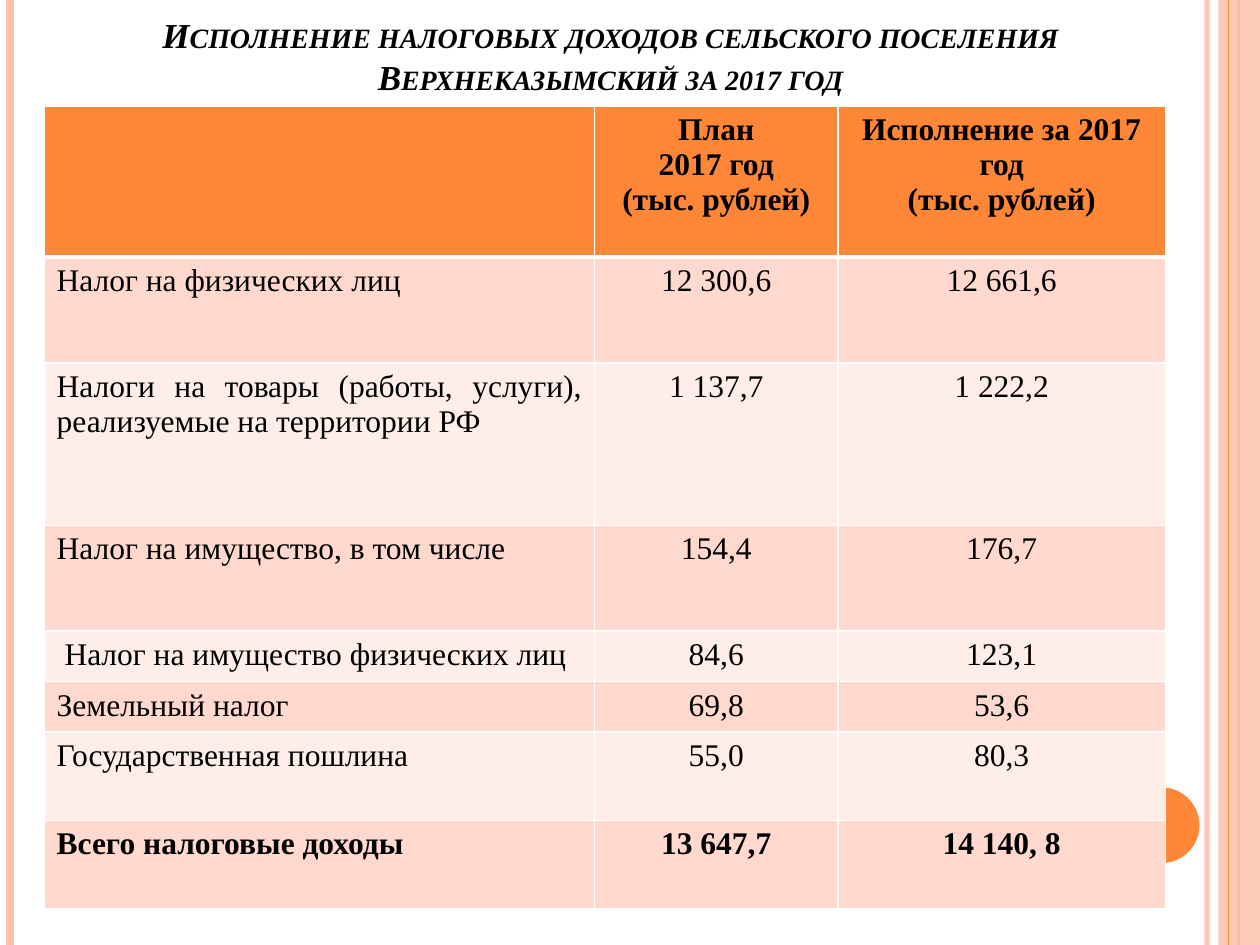
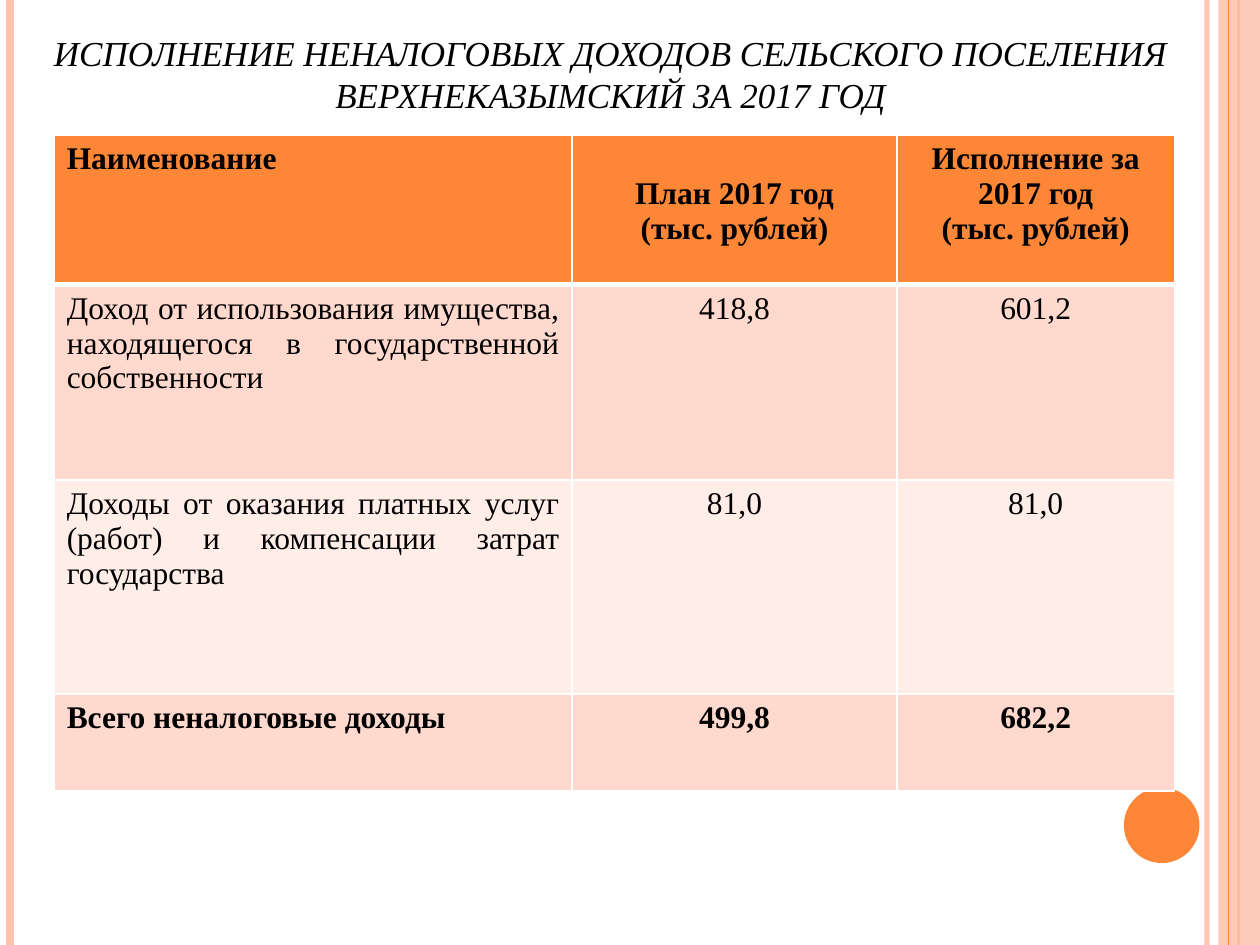
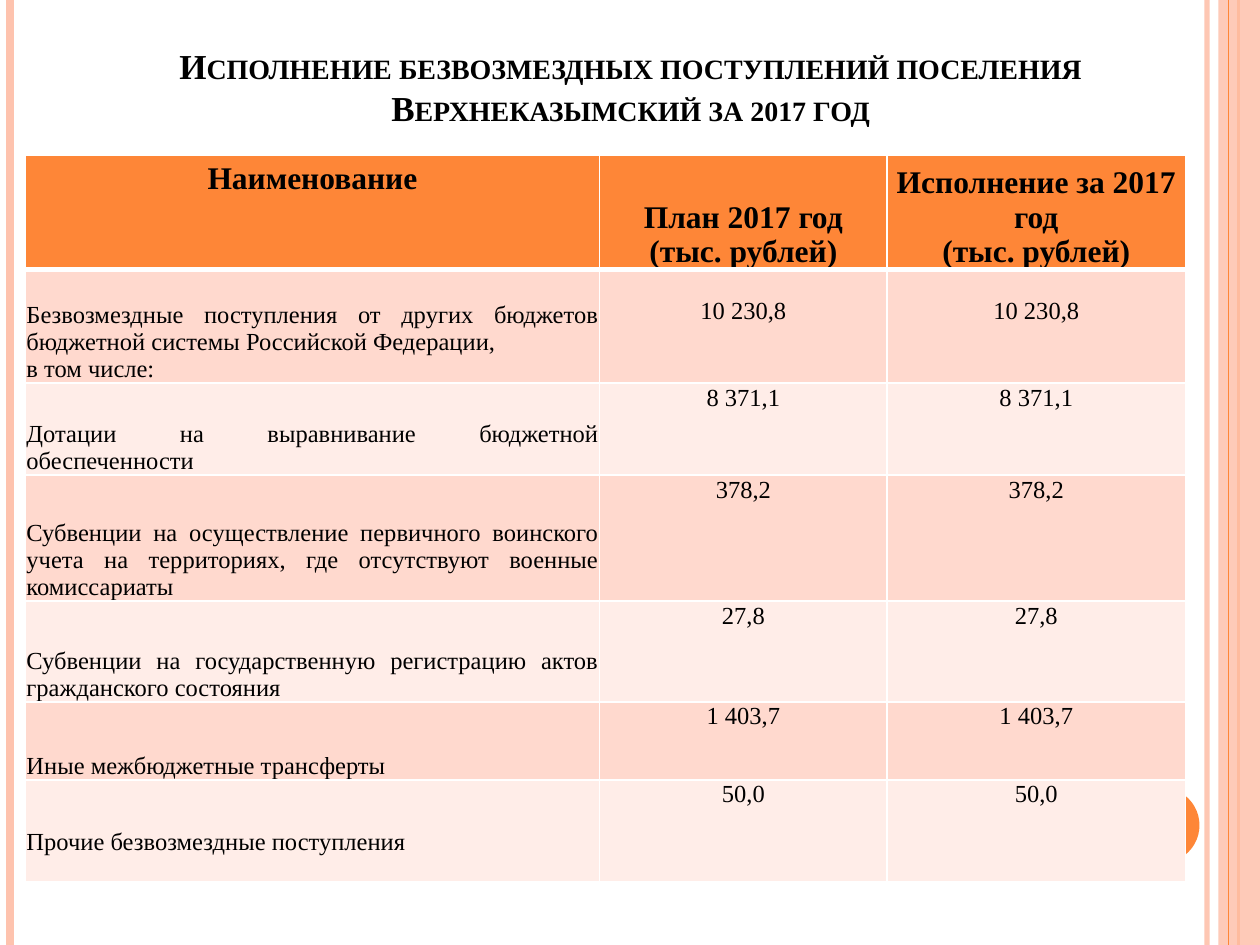
from dataclasses import dataclass, field

from lxml import etree
from pptx import Presentation
from pptx.dml.color import RGBColor
from pptx.enum.shapes import MSO_CONNECTOR, MSO_SHAPE
from pptx.enum.text import MSO_ANCHOR, PP_ALIGN
from pptx.oxml.ns import qn
from pptx.util import Inches, Pt

ORANGE = RGBColor(0xFE, 0x86, 0x37)
PEACH = RGBColor(0xFE, 0xC3, 0xAE)
DARK_ROW = RGBColor(0xFF, 0xD9, 0xCE)
LIGHT_ROW = RGBColor(0xFF, 0xED, 0xE8)
WHITE = RGBColor(0xFF, 0xFF, 0xFF)
BLACK = RGBColor(0, 0, 0)
FONT = "Times New Roman"
SLIDE_W, SLIDE_H = 10, 7.5
HEADER_SIZE, TITLE_SIZE = 18, 20


@dataclass(frozen=True)
class Stripe:
    x: float
    color: RGBColor
    width: float
    opacity: int = 100


@dataclass(frozen=True)
class Title:
    text: str
    left: float
    top: float
    width: float
    height: float
    bold: bool = True
    italic: bool = False
    small_caps: bool = True
    side_inset: float = 0.1
    bottom_inset: float = 0.05


@dataclass(frozen=True)
class Budget:
    """A table of income lines with planned and actual sums."""
    left: float
    top: float
    columns: list[float]
    heights: list[float]
    rows: list[tuple[str, str, str]]
    body_size: int = 18
    total_row: bool = True
    tight: bool = False
    corner_align: PP_ALIGN = PP_ALIGN.CENTER
    top_insets: dict[tuple[int, int], float] = field(default_factory=dict)
    bottom_insets: dict[tuple[int, int], float] = field(default_factory=dict)


STRIPES_BELOW = [Stripe(9.58, PEACH, 3, 93), Stripe(0.08, PEACH, 4.5),
                 Stripe(9.83, ORANGE, 1.5)]
STRIPE_ABOVE = Stripe(9.75, ORANGE, 0.75)

PAGES = [
    (
        Title("Исполнение налоговых доходов сельского поселения "
              "Верхнеказымский за 2017 год", 0.35, 0.12, 8.99, 0.7, italic=True),
        Budget(0.35, 0.84, [4.37, 1.93, 2.6],
               [1.2, 0.84, 1.29, 0.84, 0.39, 0.4, 0.7, 0.7], [
            ("", "План\n2017 год\n(тыс. рублей)",
             "Исполнение за 2017 год\n(тыс. рублей)"),
            ("Налог на физических лиц", "12 300,6", "12 661,6"),
            ("Налоги на товары (работы, услуги), реализуемые на территории РФ",
             "1 137,7", "1 222,2"),
            ("Налог на имущество, в том числе", "154,4", "176,7"),
            (" Налог на имущество физических лиц", "84,6", "123,1"),
            ("Земельный налог", "69,8", "53,6"),
            ("Государственная пошлина", "55,0", "80,3"),
            ("Всего налоговые доходы", "13 647,7", "14 140, 8"),
        ]),
    ),
    (
        Title("ИСПОЛНЕНИЕ НЕНАЛОГОВЫХ ДОХОДОВ СЕЛЬСКОГО ПОСЕЛЕНИЯ "
              "ВЕРХНЕКАЗЫМСКИЙ ЗА 2017 ГОД", 0.35, 0.21, 8.99, 0.71,
              bold=False, italic=True, small_caps=False,
              side_inset=0.05, bottom_inset=0),
        Budget(0.43, 1.07, [4.11, 2.58, 2.2], [1.19, 1.55, 1.7, 0.77], [
            ("Наименование", "План 2017 год\n(тыс. рублей)",
             "Исполнение за 2017 год\n(тыс. рублей)"),
            ("Доход от использования имущества, находящегося "
             "в государственной собственности", "418,8", "601,2"),
            ("Доходы от оказания платных услуг (работ) "
             "и компенсации затрат государства", "81,0", "81,0"),
            ("Всего неналоговые доходы", "499,8", "682,2"),
        ], corner_align=PP_ALIGN.LEFT, top_insets={(0, 1): 0.33}),
    ),
    (
        Title("Исполнение безвозмездных поступлений поселения "
              "Верхнеказымский за 2017 год", 0.28, 0.37, 9.45, 0.7),
        Budget(0.2, 1.23, [4.56, 2.28, 2.37],
               [0.87, 0.9, 0.73, 1, 0.8, 0.62, 0.81], [
            ("Наименование", "План 2017 год\n(тыс. рублей)",
             "Исполнение за 2017 год\n(тыс. рублей)"),
            ("Безвозмездные поступления от других бюджетов бюджетной системы "
             "Российской Федерации,\nв том числе:", "10 230,8", "10 230,8"),
            ("Дотации на выравнивание бюджетной обеспеченности",
             "8 371,1", "8 371,1"),
            ("Субвенции на осуществление первичного воинского учета на "
             "территориях, где отсутствуют военные комиссариаты",
             "378,2", "378,2"),
            ("Субвенции на государственную регистрацию актов гражданского "
             "состояния", "27,8", "27,8"),
            ("Иные межбюджетные трансферты", "1 403,7", "1 403,7"),
            ("Прочие безвозмездные поступления", "50,0", "50,0"),
        ], body_size=14, total_row=False, tight=True,
            top_insets={(1, 1): 0.22, (1, 2): 0.22},
            bottom_insets={(6, 0): 0.21}),
    ),
]


def set_opacity(element: etree.ElementBase, percent: int) -> None:
    for color in element.iter(qn("a:srgbClr")):
        etree.SubElement(color, qn("a:alpha"), val=str(percent * 1000))


def style_text(frame, size: int, align: PP_ALIGN, bold: bool,
               italic: bool = False, small_caps: bool = False) -> None:
    for paragraph in frame.paragraphs:
        paragraph.alignment = align
        for run in paragraph.runs:
            font = run.font
            font.name, font.size = FONT, Pt(size)
            font.bold, font.italic = bold, italic
            font.color.rgb = BLACK
            if small_caps:
                run._r.get_or_add_rPr().set("cap", "small")


def draw_stripe(slide, stripe: Stripe) -> None:
    x = Inches(stripe.x)
    line = slide.shapes.add_connector(MSO_CONNECTOR.STRAIGHT, x, 0, x, Inches(SLIDE_H))
    line.line.color.rgb = stripe.color
    line.line.width = Pt(stripe.width)
    properties = line._element.spPr
    if stripe.opacity < 100:
        set_opacity(properties, stripe.opacity)
    etree.SubElement(properties, qn("a:effectLst"))


def draw_solid(slide, kind: MSO_SHAPE, left: float, top: float, width: float,
               height: float, color: RGBColor, opacity: int = 100) -> None:
    solid = slide.shapes.add_shape(kind, Inches(left), Inches(top),
                                   Inches(width), Inches(height))
    solid.shadow.inherit = False
    solid.fill.solid()
    solid.fill.fore_color.rgb = color
    solid.line.fill.background()
    if opacity < 100:
        set_opacity(solid._element.spPr, opacity)


def draw_frame(slide) -> None:
    for stripe in STRIPES_BELOW:
        draw_stripe(slide, stripe)
    draw_solid(slide, MSO_SHAPE.RECTANGLE, 9.67, 0, 0.33, SLIDE_H, PEACH, 87)
    draw_stripe(slide, STRIPE_ABOVE)
    draw_solid(slide, MSO_SHAPE.OVAL, 8.92, 6.25, 0.6, 0.6, ORANGE)


def draw_title(slide, title: Title) -> None:
    box = slide.shapes.add_textbox(Inches(title.left), Inches(title.top),
                                   Inches(title.width), Inches(title.height))
    frame = box.text_frame
    frame.word_wrap = True
    frame.vertical_anchor = MSO_ANCHOR.BOTTOM
    frame.margin_left = frame.margin_right = Inches(title.side_inset)
    frame.margin_top, frame.margin_bottom = 0, Inches(title.bottom_inset)
    frame.text = title.text
    style_text(frame, TITLE_SIZE, PP_ALIGN.CENTER, title.bold, title.italic,
               title.small_caps)


def set_borders(cell, row: int) -> None:
    widths = {"L": 1, "R": 1, "T": 3 if row == 1 else 1, "B": 3 if row == 0 else 1}
    properties = cell._tc.get_or_add_tcPr()
    for side, points in widths.items():
        edge = etree.SubElement(properties, qn(f"a:ln{side}"), w=str(Pt(points)))
        fill = etree.SubElement(edge, qn("a:solidFill"))
        etree.SubElement(fill, qn("a:srgbClr"), val=str(WHITE))


def fill_cell(cell, budget: Budget, row: int, column: int) -> None:
    header, corner = row == 0, row == column == 0
    set_borders(cell, row)
    cell.fill.solid()
    cell.fill.fore_color.rgb = ORANGE if header else DARK_ROW if row % 2 else LIGHT_ROW

    # Insets and anchor
    side, top, bottom = (0.1, 0.05, 0.05)
    if budget.tight and not corner:
        side, top, bottom = (0.01, 0.01, 0)
        if header or column == 0:
            cell.vertical_anchor = MSO_ANCHOR.BOTTOM
    cell.margin_left = cell.margin_right = Inches(side)
    cell.margin_top = Inches(budget.top_insets.get((row, column), top))
    cell.margin_bottom = Inches(budget.bottom_insets.get((row, column), bottom))

    # Text
    if corner:
        align = budget.corner_align
    else:
        align = PP_ALIGN.CENTER if header or column else PP_ALIGN.JUSTIFY
    total = budget.total_row and row == len(budget.rows) - 1
    cell.text_frame.text = budget.rows[row][column]
    style_text(cell.text_frame, HEADER_SIZE if header else budget.body_size,
               align, header or total)


def draw_budget(slide, budget: Budget) -> None:
    table = slide.shapes.add_table(
        len(budget.rows), len(budget.columns), Inches(budget.left), Inches(budget.top),
        Inches(sum(budget.columns)), Inches(sum(budget.heights))).table
    for column, width in zip(table.columns, budget.columns):
        column.width = Inches(width)
    for row, height in zip(table.rows, budget.heights):
        row.height = Inches(height)
    for row in range(len(budget.rows)):
        for column in range(len(budget.columns)):
            fill_cell(table.cell(row, column), budget, row, column)


def main() -> None:
    deck = Presentation()
    deck.slide_width, deck.slide_height = Inches(SLIDE_W), Inches(SLIDE_H)
    for title, budget in PAGES:
        slide = deck.slides.add_slide(deck.slide_layouts[6])
        draw_frame(slide)
        draw_title(slide, title)
        draw_budget(slide, budget)
    deck.save("out.pptx")


if __name__ == "__main__":
    main()
